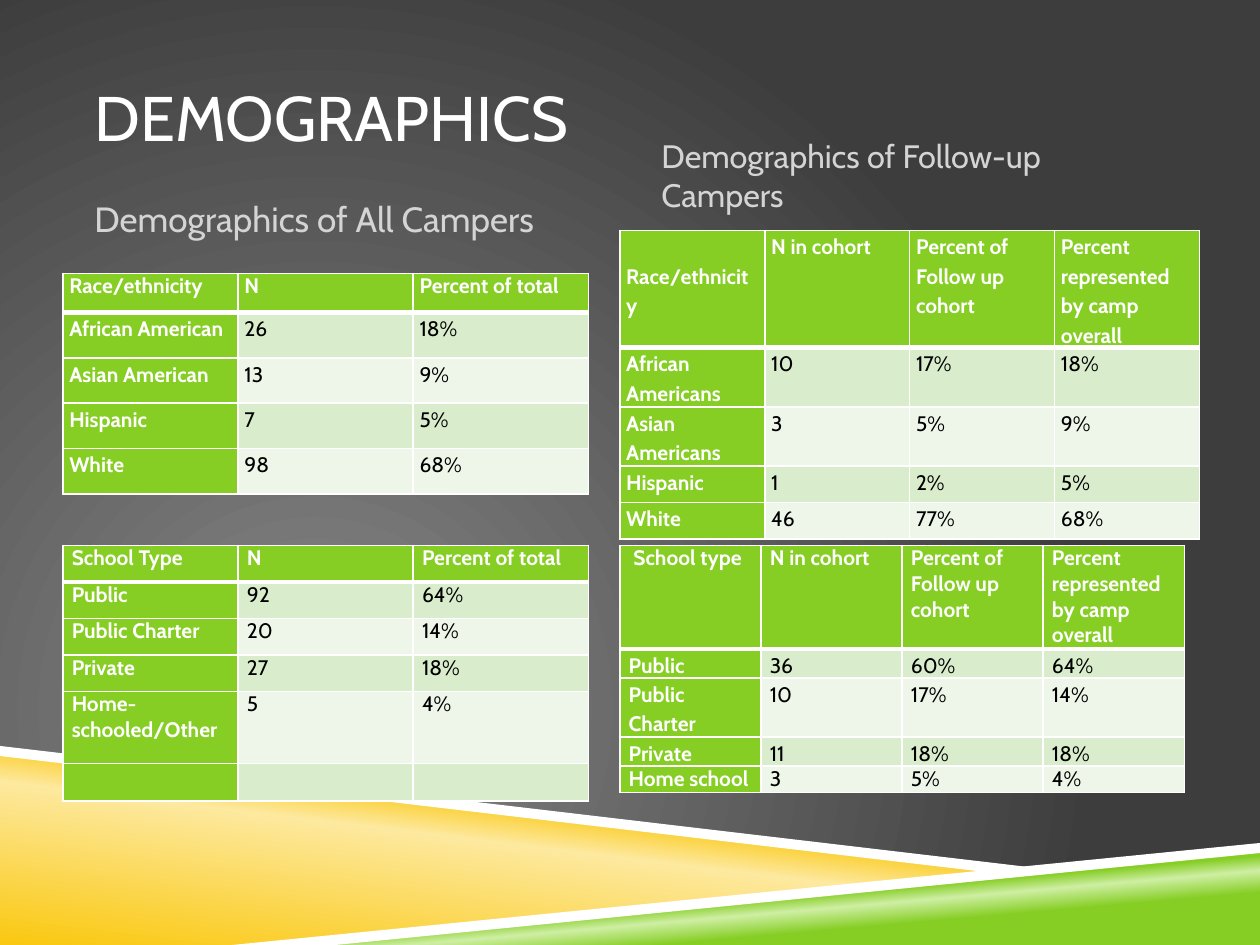
from lxml import etree
from pptx import Presentation
from pptx.dml.color import RGBColor
from pptx.enum.text import MSO_ANCHOR
from pptx.oxml import parse_xml
from pptx.oxml.ns import nsdecls, qn
from pptx.util import Inches, Pt

MIDDLE, BOTTOM = MSO_ANCHOR.MIDDLE, MSO_ANCHOR.BOTTOM
WHITE, BLACK, GRAY = "FFFFFF", "000000", "D4D4D4"
GREEN, BAND_DARK, BAND_LIGHT = "86CE24", "D9EDCD", "EDF6E8"
CIRCLE = '<a:path path="circle"><a:fillToRect l="50000" t="100000" r="100000" b="50000"/></a:path>'


def write(frame, text, size=12, color=WHITE, bold=False, spacing=None):
    para = frame.paragraphs[0]
    if spacing:
        para.line_spacing = spacing
    span = para.add_run()
    span.text = text
    span.font.name = "Cabin"
    span.font.size = Pt(size)
    span.font.bold = bold
    span.font.color.rgb = RGBColor.from_string(color)


def set_gradient(fill, holder, stops, direction):
    """Give the fill any number of stops; holder is the XML parent of the fill."""
    fill.gradient()
    marks = "".join(f'<a:gs pos="{position * 1000}"><a:srgbClr val="{color}"/></a:gs>'
                    for position, color in stops)
    holder.replace(holder.find(qn("a:gradFill")), parse_xml(
        f'<a:gradFill {nsdecls("a")} rotWithShape="1"><a:gsLst>{marks}</a:gsLst>{direction}</a:gradFill>'))


deck = Presentation()
deck.slide_width, deck.slide_height = Inches(10), Inches(7.5)
page = deck.slides.add_slide(deck.slide_layouts[6])
backdrop = page.background.fill
backdrop.gradient()
set_gradient(backdrop, page.element.cSld.find(qn("p:bg")).find(qn("p:bgPr")),
             [(0, "878787"), (100, "3D3D3D")], CIRCLE)

# Bands along the bottom: outline, then a plain colour or gradient stops with an angle
bands = [
    ([(1.98, 7.5), (10, 6.72), (10, 7.5)], [(28, GREEN), (40, "CFEFA4"), (48, GREEN)], 265),
    ([(0, 5.97), (7.92, 6.92), (2, 7.5), (0, 7.5)],
     [(0, "FAC810"), (52, "FDE99F"), (66, "FAC810")], 277),
    ([(0, 5.92), (0, 6), (7.9, 6.93), (8.32, 6.9)], WHITE, None),
    ([(10, 6.69), (1.84, 7.5), (2.66, 7.5), (10, 6.77)], WHITE, None),
]
for outline, paint, angle in bands:
    points = [(Inches(x), Inches(y)) for x, y in outline]
    builder = page.shapes.build_freeform(*points[0])
    builder.add_line_segments(points[1:], close=True)
    band = builder.convert_to_shape()
    band.shadow.inherit = False
    band.line.fill.background()
    if angle:
        set_gradient(band.fill, band.element.spPr, paint,
                     f'<a:lin ang="{angle * 60000}" scaled="0"/>')
    else:
        band.fill.solid()
        band.fill.fore_color.rgb = RGBColor.from_string(paint)

headings = [
    ("DEMOGRAPHICS", 0.75, 0.3, 8.5, 1.25, MIDDLE, 36, WHITE),
    ("Demographics of All Campers", 0.75, 1.25, 4, 0.7, BOTTOM, 20, GRAY),
    ("Demographics of Follow-up Campers", 5.25, 1.25, 4, 0.5, BOTTOM, 18.5, GRAY),
]
for text, left, top, width, height, anchor, size, color in headings:
    box = page.shapes.add_textbox(Inches(left), Inches(top), Inches(width), Inches(height))
    frame = box.text_frame
    frame.word_wrap = True
    frame.vertical_anchor = anchor
    frame.margin_left = frame.margin_right = 0
    write(frame, text, size=size, color=color)

# Tables: left, top, column width, side margin, row heights, line spacing by row, rows
cohort_columns = ["N in cohort", "Percent of Follow up cohort",
                  "Percent represented by camp overall"]
tables = [
    (0.5, 2.17, 1.39, 0.05, [0.31] + [0.36] * 4, [None] + [1.15] * 4, [
        ["Race/ethnicity", "N", "Percent of total"],
        ["African American", "26", "18%"],
        ["Asian American", "13", "9%"],
        ["Hispanic", "7", "5%"],
        ["White", "98", "68%"]]),
    (4.92, 1.83, 1.15, 0.05, [0.93, 0.47, 0.47, 0.29, 0.29], [1.15] * 5, [
        [" Race/ethnicity", *cohort_columns],
        ["African Americans", "10", "17%", "18%"],
        ["Asian Americans", "3", "5%", "9%"],
        ["Hispanic", "1", "2%", "5%"],
        ["White", "46", "77%", "68%"]]),
    (0.5, 4.33, 1.39, 0.07, [0.29] * 4 + [0.57, 0.29], [None] * 6, [
        ["School Type", "N", "Percent of total"],
        ["Public", "92", "64%"],
        ["Public Charter", "20", "14%"],
        ["Private", "27", "18%"],
        ["Home-schooled/Other", "5", "4%"],
        ["", "", ""]]),
    (4.92, 4.33, 1.12, 0.07, [0.82, 0.23, 0.47, 0.23, 0.21], [None, 1.15, 1.15, 1.15, None], [
        [" School type", *cohort_columns],
        ["Public", "36", "60%", "64%"],
        ["Public Charter", "10", "17%", "14%"],
        ["Private", "11", "18%", "18%"],
        ["Home school", "3", "5%", "4%"]]),
]
for left, top, column_width, margin, heights, spacings, rows in tables:
    columns = len(rows[0])
    table = page.shapes.add_table(
        len(rows), columns, Inches(left), Inches(top),
        Inches(column_width * columns), Inches(sum(heights))).table
    for column in table.columns:
        column.width = Inches(column_width)
    for r, texts in enumerate(rows):
        table.rows[r].height = Inches(heights[r])
        for c, text in enumerate(texts):
            cell = table.cell(r, c)
            cell.margin_left = cell.margin_right = Inches(margin)
            cell.margin_top = cell.margin_bottom = 0
            label = r == 0 or c == 0
            write(cell.text_frame, text, color=WHITE if label else BLACK,
                  bold=label, spacing=spacings[r])
            properties = cell._tc.get_or_add_tcPr()
            for side in "LRTB":
                thick = (r, side) in [(0, "B"), (1, "T")]
                edge = etree.SubElement(properties, qn(f"a:ln{side}"), w=str(Pt(3 if thick else 1)))
                paint = etree.SubElement(edge, qn("a:solidFill"))
                etree.SubElement(paint, qn("a:srgbClr"), val=WHITE)
            cell.fill.solid()
            shade = GREEN if label else BAND_DARK if r % 2 else BAND_LIGHT
            cell.fill.fore_color.rgb = RGBColor.from_string(shade)

deck.save("out.pptx")
